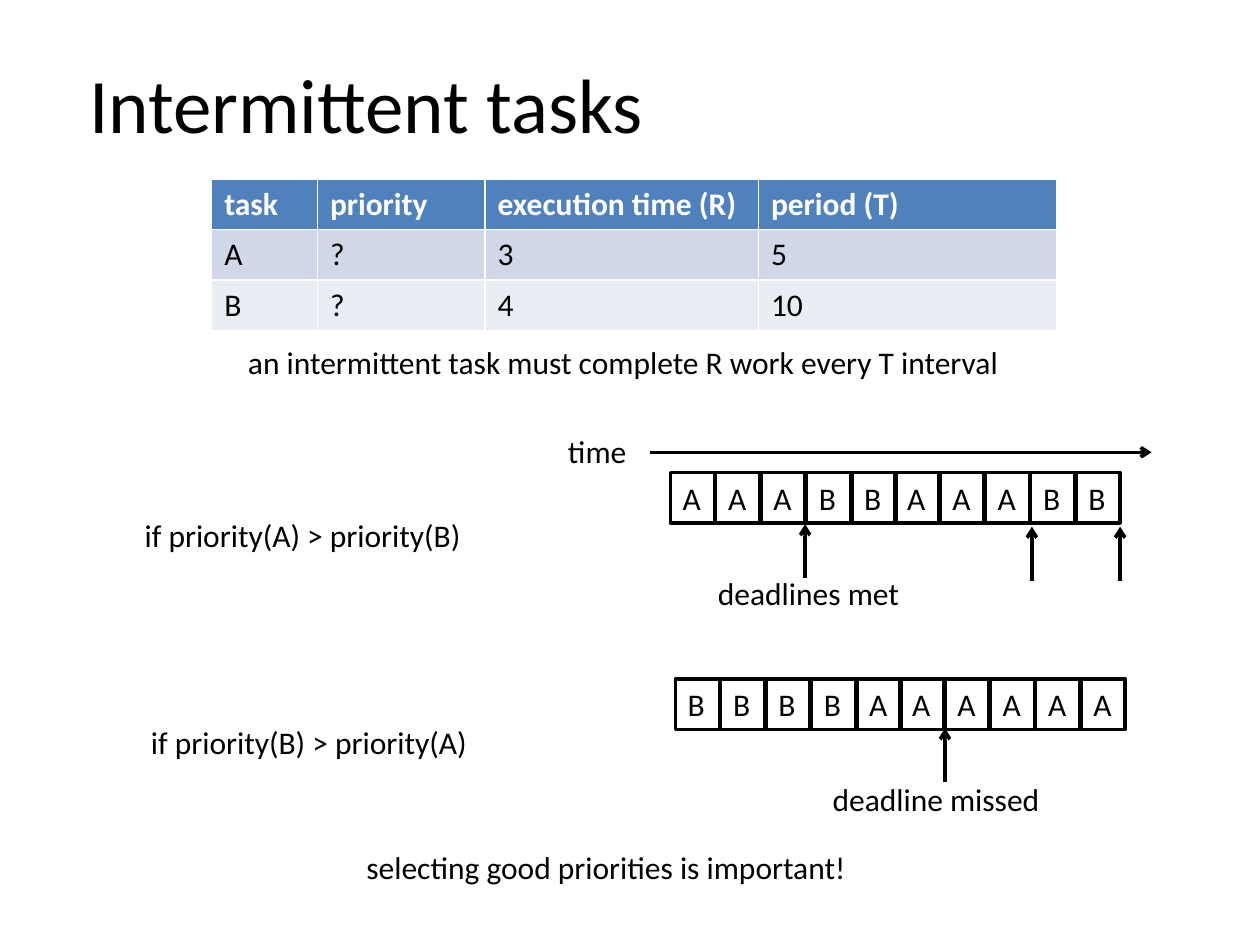
from lxml.etree import SubElement
from pptx import Presentation
from pptx.dml.color import RGBColor
from pptx.enum.shapes import MSO_CONNECTOR, MSO_SHAPE
from pptx.enum.text import MSO_ANCHOR, MSO_AUTO_SIZE, PP_ALIGN
from pptx.oxml.ns import qn
from pptx.util import Inches, Pt

# Theme
THEME = {
    "font": "Calibri", "title": 44, "body": 18, "line": 2,
    "ink": "000000", "white": "FFFFFF",
    "header": "4F81BD", "bands": ("D0D8E8", "E9EDF4"),
}

# Content
TABLE = [
    ("task", "priority", "execution time (R)", "period (T)"),
    ("A", "?", "3", "5"),
    ("B", "?", "4", "10"),
]
TEXTS = [  # text, left, top, width, height, size
    ("Intermittent tasks", 0.61, 0.4, 4.66, 0.84, "title"),
    ("an intermittent task must complete R work every T interval",
     1.87, 2.67, 6.17, 0.4, "body"),
    ("time", 4.41, 3.38, 0.67, 0.4, "body"),
    ("if priority(A) > priority(B)", 1.05, 4.05, 2.74, 0.4, "body"),
    ("deadlines met", 5.6, 4.51, 1.66, 0.4, "body"),
    ("if priority(B) > priority(A)", 1.1, 5.69, 2.74, 0.4, "body"),
    ("deadline missed", 6.51, 6.14, 1.86, 0.4, "body"),
    ("selecting good priorities is important!", 2.81, 6.68, 4.07, 0.4, "body"),
]
SCHEDULES = [("AAABBAAABB", 5.32, 3.75), ("BBBBAAAAAA", 5.36, 5.39)]
DEADLINES = [(6.39, 4.59), (8.19, 4.61), (8.89, 4.61), (7.5, 6.21)]  # x, foot

# Grid
TABLE_LEFT, TABLE_TOP, ROW_H = 1.68, 1.42, 0.4
COL_W = (0.84, 1.33, 2.17, 2.37)
SLOT_W, SLOT_H, SLOT_STEP = 0.35, 0.4, 0.36
HALF, HALF_STEP = 5, 1.78  # each timeline is two runs of five slots
ARROW_H = 0.43


def rgb(name):
    return RGBColor.from_string(THEME.get(name, name))


def write(tf, text, size="body", color="ink", bold=False):
    p = tf.paragraphs[0]
    p.alignment = PP_ALIGN.LEFT
    r = p.add_run()
    r.text = text
    fmt = {"name": THEME["font"], "size": Pt(THEME[size]), "bold": bold}
    for key, value in fmt.items():
        setattr(r.font, key, value)
    r.font.color.rgb = rgb(color)


def write_unwrapped(s, text, size="body"):
    fmt = {"word_wrap": False, "auto_size": MSO_AUTO_SIZE.SHAPE_TO_FIT_TEXT,
           "vertical_anchor": MSO_ANCHOR.TOP}
    for key, value in fmt.items():
        setattr(s.text_frame, key, value)
    write(s.text_frame, text, size)


def add_slot(shapes, task, x, y):
    s = shapes.add_shape(MSO_SHAPE.RECTANGLE,
                         *map(Inches, (x, y, SLOT_W, SLOT_H)))
    s.shadow.inherit = False
    s.fill.background()
    s.line.color.rgb = rgb("ink")
    s.line.width = Pt(THEME["line"])
    write_unwrapped(s, task)


def add_arrow(shapes, x1, y1, x2, y2):
    s = shapes.add_connector(MSO_CONNECTOR.STRAIGHT,
                             *map(Inches, (x1, y1, x2, y2)))
    s.line.color.rgb = rgb("ink")
    s.line.width = Pt(THEME["line"])
    SubElement(s.line._get_or_add_ln(), qn("a:tailEnd"), type="arrow")
    SubElement(s._element.spPr, qn("a:effectLst"))


def add_task_table(shapes):
    table = shapes.add_table(
        len(TABLE), len(COL_W),
        *map(Inches, (TABLE_LEFT, TABLE_TOP, sum(COL_W), ROW_H * len(TABLE))),
    ).table
    for column, width in zip(table.columns, COL_W):
        column.width = Inches(width)
    fills = (THEME["header"], *THEME["bands"])
    for i, (row, fill) in enumerate(zip(TABLE, fills)):
        for j, text in enumerate(row):
            cell = table.cell(i, j)
            cell.fill.solid()
            cell.fill.fore_color.rgb = rgb(fill)
            write(cell.text_frame, text,
                  color="ink" if i else "white", bold=i == 0)


def main():
    prs = Presentation()
    prs.slide_width, prs.slide_height = Inches(10), Inches(7.5)
    shapes = prs.slides.add_slide(prs.slide_layouts[6]).shapes

    # Title, notes and labels
    for text, x, y, w, h, size in TEXTS:
        write_unwrapped(shapes.add_textbox(*map(Inches, (x, y, w, h))),
                        text, size)

    add_task_table(shapes)

    # Timelines
    for tasks, left, top in SCHEDULES:
        for i, task in enumerate(tasks):
            half, k = divmod(i, HALF)
            add_slot(shapes, task, left + half * HALF_STEP + k * SLOT_STEP, top)

    # Time axis and deadline markers
    add_arrow(shapes, 5.16, 3.59, 9.14, 3.59)
    for x, foot in DEADLINES:
        add_arrow(shapes, x, foot, x, foot - ARROW_H)

    prs.save("out.pptx")


if __name__ == "__main__":
    main()
